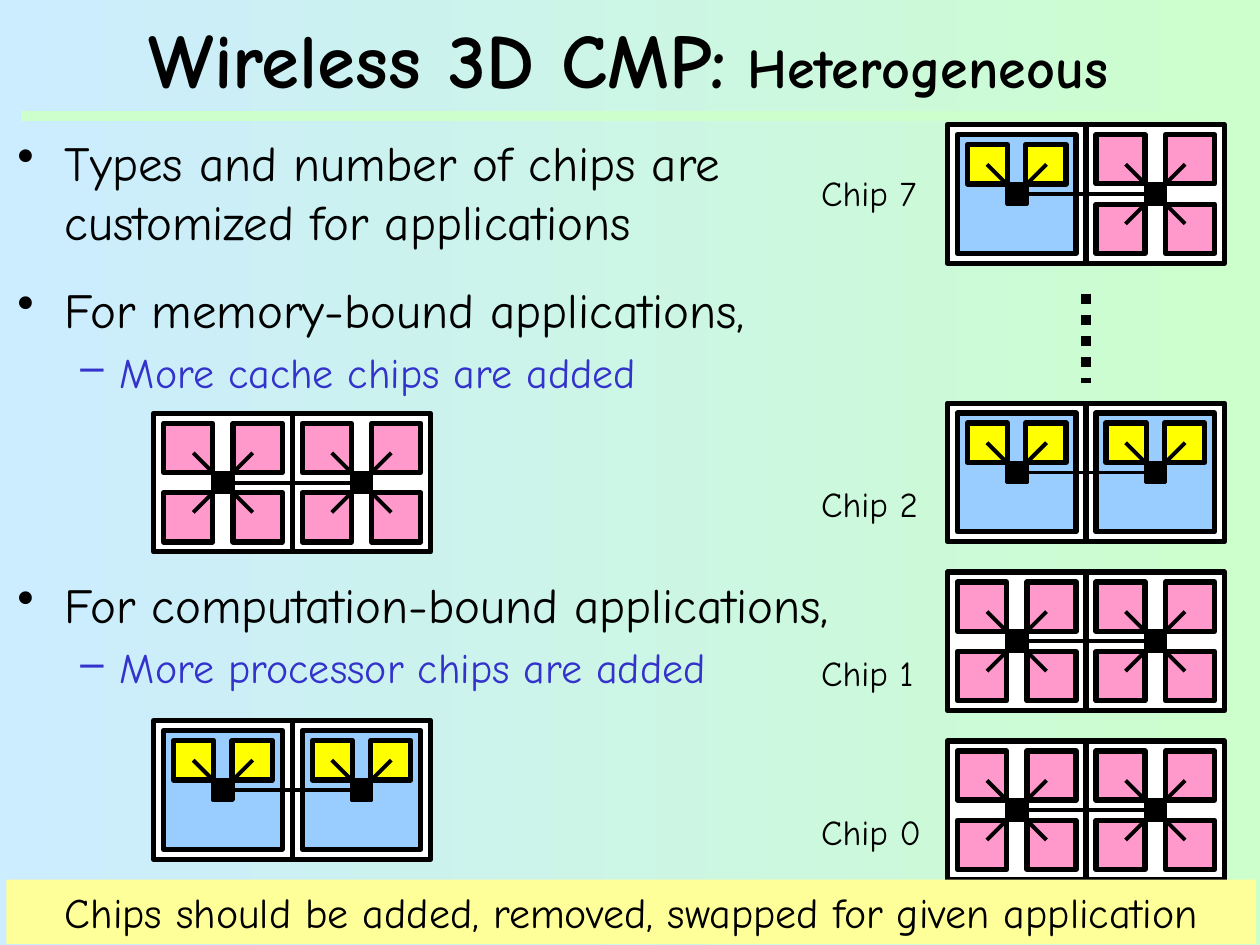
from lxml import etree
from pptx import Presentation
from pptx.dml.color import RGBColor
from pptx.enum import dml, shapes, text
from pptx.oxml import ns
from pptx.util import Pt

BLACK = RGBColor(0x00, 0x00, 0x00)
WHITE = RGBColor(0xFF, 0xFF, 0xFF)
SKY = RGBColor(0xCC, 0xEC, 0xFF)
MINT = RGBColor(0xCC, 0xFF, 0xCC)
INDIGO = RGBColor(0x33, 0x33, 0xCC)
CORE_BLUE = RGBColor(0x99, 0xCC, 0xFF)
L1_YELLOW = RGBColor(0xFF, 0xFF, 0x00)
CACHE_PINK = RGBColor(0xFF, 0x99, 0xCC)
BANNER_YELLOW = RGBColor(0xFF, 0xFF, 0x99)
FONT = "Comic Neue"

presentation = Presentation()
presentation.slide_width, presentation.slide_height = Pt(720), Pt(540)
slide = presentation.slides.add_slide(presentation.slide_layouts[6])


def add_box(left, top, width, height, fill, line_width=3):
    shape = slide.shapes.add_shape(
        shapes.MSO_SHAPE.RECTANGLE, Pt(left), Pt(top), Pt(width), Pt(height))
    shape.shadow.inherit = False
    shape.fill.solid()
    shape.fill.fore_color.rgb = fill
    if line_width:
        shape.line.color.rgb = BLACK
        shape.line.width = Pt(line_width)
    else:
        shape.line.fill.background()
    return shape


def add_line(x1, y1, x2, y2, color=BLACK, width=2.25):
    line = slide.shapes.add_connector(
        shapes.MSO_CONNECTOR.STRAIGHT, Pt(x1), Pt(y1), Pt(x2), Pt(y2))
    line.line.color.rgb = color
    line.line.width = Pt(width)
    etree.SubElement(line._element.spPr, ns.qn("a:effectLst"))
    return line


# Background, left to right
background = slide.background.fill
background.gradient()
background.gradient_angle = 0
for stop, color, position in zip(background.gradient_stops, (SKY, MINT), (0, 1)):
    stop.color.rgb = color
    stop.position = position

# Title and rule
add_line(12.2, 66.2, 714.2, 66.2, MINT, 6)
title = slide.shapes.add_textbox(Pt(-0.7), Pt(5.8), Pt(720), Pt(54)).text_frame
title.word_wrap = True
title.vertical_anchor = text.MSO_ANCHOR.MIDDLE
title.paragraphs[0].alignment = text.PP_ALIGN.CENTER
for words, size in (("Wireless 3D CMP:", 44), (" Heterogeneous", 32)):
    run = title.paragraphs[0].add_run()
    run.text = words
    run.font.name, run.font.size, run.font.bold = FONT, Pt(size), True
    run.font.color.rgb = BLACK

# Bullets: text, level, space before (leaving room for the chip drawings)
BULLETS = (
    ("Types and number of chips are customized for applications", 0, 5.6),
    ("For memory-bound applications,", 0, 16.9),
    ("More cache chips are added", 1, 4.8),
    ("For computation-bound applications,", 0, 101.5),
    ("More processor chips are added", 1, 4.8),
)
# Level: size, colour, bullet, left margin, hanging indent
LEVELS = ((28, BLACK, "•", 27, -27), (24, INDIGO, "–", 58.5, -22.5))
body = slide.shapes.add_textbox(Pt(2.9), Pt(72), Pt(540.7), Pt(444)).text_frame
body.word_wrap = True
for index, (words, level, space) in enumerate(BULLETS):
    size, color, bullet, margin, indent = LEVELS[level]
    paragraph = body.add_paragraph() if index else body.paragraphs[0]
    paragraph.text = words
    paragraph.level = level
    paragraph.space_before = Pt(space)
    font = paragraph.runs[0].font
    font.name, font.size = FONT, Pt(size)
    font.color.rgb = color
    properties = paragraph._p.get_or_add_pPr()
    properties.set("marL", str(Pt(margin)))
    properties.set("indent", str(Pt(indent)))
    etree.SubElement(properties, ns.qn("a:buChar")).set("char", bullet)

# Chips: left, top, kinds of the two tiles
STACK_LEFT, SAMPLE_LEFT = 541.4, 87.8
CHIPS = (
    (STACK_LEFT, 71.3, ("processor", "cache")),
    (STACK_LEFT, 230.4, ("processor", "processor")),
    (STACK_LEFT, 326.9, ("cache", "cache")),
    (STACK_LEFT, 423.4, ("cache", "cache")),
    (SAMPLE_LEFT, 236.2, ("cache", "cache")),
    (SAMPLE_LEFT, 411.8, ("processor", "processor")),
)
TILE, MARGIN, BANK, ROUTER, REACH = 79.2, 5.7, 28.1, 11.5, 17
L1_WIDTH, L1_HEIGHT = 23, 22.5
for chip_left, top, kinds in CHIPS:
    middle = top + TILE / 2
    for column, kind in enumerate(kinds):
        left = chip_left + column * TILE
        center = left + TILE / 2
        add_box(left, top, TILE, TILE, WHITE)
        if kind == "processor":
            core = TILE - 2 * MARGIN
            add_box(left + MARGIN, top + MARGIN, core, core, CORE_BLUE)
            inset = 2 * MARGIN
            for x in (inset, TILE - inset - L1_WIDTH):
                add_box(left + x, top + inset, L1_WIDTH, L1_HEIGHT, L1_YELLOW)
        else:
            offsets = (MARGIN, TILE - MARGIN - BANK)
            for y in offsets:
                for x in offsets:
                    add_box(left + x, top + y, BANK, BANK, CACHE_PINK)
        add_box(center - ROUTER / 2, middle - ROUTER / 2, ROUTER, ROUTER, BLACK, 2)
        # Processor wires stop at the router, cache wires cross it
        for side in (-REACH, REACH):
            end = 0 if kind == "processor" else -1
            add_line(center + side, middle - REACH,
                     center + end * side, middle - end * REACH)
    add_line(chip_left + TILE / 2, middle, chip_left + 1.5 * TILE, middle)

# Omitted chips
dots = add_line(STACK_LEFT + TILE, 167.8, STACK_LEFT + TILE, 218.9, width=6)
dots.line.dash_style = dml.MSO_LINE.ROUND_DOT

# Chip labels
for words, top in (("Chip 7", 94.3), ("Chip 2", 272.2), ("Chip 1", 368.6), ("Chip 0", 459.4)):
    label = slide.shapes.add_textbox(Pt(462.2), Pt(top), Pt(79.2), Pt(31.7)).text_frame
    label.word_wrap = False
    label.text = words
    font = label.paragraphs[0].runs[0].font
    font.name, font.size = FONT, Pt(20)
    font.color.rgb = BLACK

# Conclusion banner
banner = add_box(3.6, 502.6, 714.2, 36.7, BANNER_YELLOW, 0).text_frame
banner.word_wrap = True
banner.text = "Chips should be added, removed, swapped for given application"
banner.paragraphs[0].alignment = text.PP_ALIGN.CENTER
font = banner.paragraphs[0].runs[0].font
font.name, font.size = FONT, Pt(24)
font.color.rgb = BLACK

presentation.save("out.pptx")
